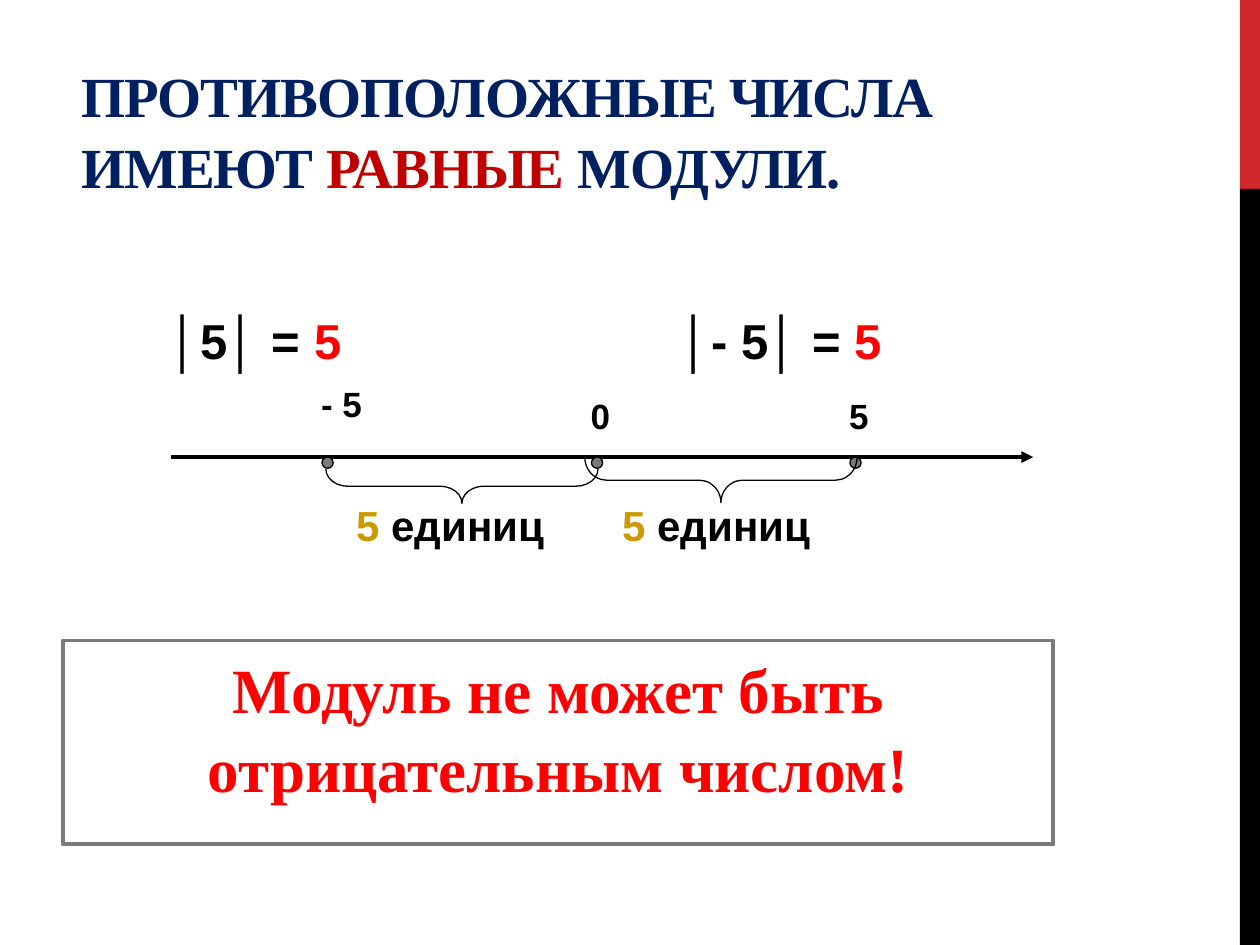
import pptx
import pptx.util
import pptx.dml.color
import pptx.enum.shapes
import pptx.enum.text
import pptx.oxml.ns
import lxml.etree
from dataclasses import dataclass

Pt = pptx.util.Pt
qn = pptx.oxml.ns.qn
Shape = pptx.enum.shapes.MSO_SHAPE
Anchor = pptx.enum.text.MSO_ANCHOR
Align = pptx.enum.text.PP_ALIGN


@dataclass(frozen=True)
class Theme:
    serif: str = "Times New Roman"
    sans: str = "Arial"
    black: str = "000000"
    white: str = "FFFFFF"
    gray: str = "7A7A7A"
    navy: str = "002060"
    crimson: str = "C00000"
    red: str = "FF0000"
    gold: str = "CC9900"
    band: str = "D1282E"
    title_size: float = 32.4
    rule_size: float = 36
    equation_size: float = 28
    unit_size: float = 24
    mark_size: float = 20


theme = Theme()
rgb = pptx.dml.color.RGBColor.from_string


def add_preset(kind, left, top, width, height, fill=None, line=None, weight=0.75):
    shape = slide.shapes.add_shape(kind, Pt(left), Pt(top), Pt(width), Pt(height))
    shape.shadow.inherit = False
    if fill:
        shape.fill.solid()
        shape.fill.fore_color.rgb = rgb(fill)
    else:
        shape.fill.background()
    if line:
        shape.line.color.rgb = rgb(line)
        shape.line.width = Pt(weight)
    else:
        shape.line.fill.background()
    return shape


def write(holder, runs, font, size, wrap=True, anchor=Anchor.TOP):
    frame = holder.text_frame
    frame.word_wrap = wrap
    frame.vertical_anchor = anchor
    paragraph = frame.paragraphs[0]
    for words, color, bold in runs:
        run = paragraph.add_run()
        run.text = words
        run.font.name = font
        run.font.size = Pt(size)
        run.font.bold = bold
        run.font.color.rgb = rgb(color)
    return paragraph


deck = pptx.Presentation()
deck.slide_width, deck.slide_height = Pt(720), Pt(540)
slide = deck.slides.add_slide(deck.slide_layouts[6])

for top, height, color in [(0, 108, theme.band), (108, 432, theme.black)]:
    add_preset(Shape.RECTANGLE, 708.5, top, 11.5, height, color)

title = slide.shapes.add_textbox(Pt(39.6), Pt(28), Pt(570), Pt(90))
heading = write(title, [
    ("ПРОТИВОПОЛОЖНЫЕ ЧИСЛА ИМЕЮТ ", theme.navy, True),
    ("РАВНЫЕ ", theme.crimson, True),
    ("МОДУЛИ.", theme.navy, True),
], theme.serif, theme.title_size, anchor=Anchor.BOTTOM)
heading.line_spacing = 1.05
for run in heading.runs:
    run.font._element.set("spc", "-60")

rule_box = add_preset(Shape.RECTANGLE, 36, 366, 566, 116.5, theme.white, theme.gray, 2.25)
rule = write(rule_box, [("Модуль не может быть отрицательным числом!", theme.red, True)],
             theme.serif, theme.rule_size)
rule.alignment = Align.CENTER
rule.line_spacing = 1.05
rule.space_before, rule.space_after = Pt(7.2), Pt(6)

equations = slide.shapes.add_textbox(Pt(90), Pt(174.2), Pt(458), Pt(41))
moduli = write(equations, [
    ("│", theme.black, False),
    ("5│ = ", theme.black, True),
    ("5", theme.red, True),
    ("\t│- 5│ = ", theme.black, True),
    ("5", theme.red, True),
], theme.sans, theme.equation_size)
tab_list = lxml.etree.SubElement(moduli._p.get_or_add_pPr(), qn("a:tabLst"))
lxml.etree.SubElement(tab_list, qn("a:tab"), pos=str(Pt(292)), algn="l")

axis_y = 261.2
axis = slide.shapes.add_connector(pptx.enum.shapes.MSO_CONNECTOR.STRAIGHT,
                                  Pt(98), Pt(axis_y), Pt(590.4), Pt(axis_y))
axis.line.color.rgb = rgb(theme.black)
axis.line.width = Pt(2.25)
lxml.etree.SubElement(axis.line._get_or_add_ln(), qn("a:tailEnd"), type="triangle")
lxml.etree.SubElement(axis._element.spPr, qn("a:effectLst"))

for label, point_x, label_x, label_y, label_width in [
    ("- 5", 187.2, 176.4, 215.3, 41),
    ("0", 341.2, 330.5, 221.8, 28),
    ("5", 488.9, 478.1, 221.8, 28),
]:
    add_preset(Shape.OVAL, point_x - 3.2, axis_y, 6.4, 6.4, theme.gray, theme.black)
    mark = slide.shapes.add_textbox(Pt(label_x), Pt(label_y), Pt(label_width), Pt(31.7))
    write(mark, [(label, theme.black, True)], theme.sans, theme.mark_size, wrap=False)

brace_span = 155.5
for middle_x, middle_y, depth, curve, unit_x, unit_width in [
    (264, 277.8, 19.6, 0.64, 196.6, 133),
    (412, 274.4, 25.8, 0.48, 348.5, 203),
]:
    brace = add_preset(Shape.LEFT_BRACE, middle_x - depth / 2, middle_y - brace_span / 2,
                       depth, brace_span, line=theme.black)
    brace.rotation = 270
    brace.adjustments[0] = curve
    units = slide.shapes.add_textbox(Pt(unit_x), Pt(282.2), Pt(unit_width), Pt(36))
    write(units, [("5", theme.gold, True), (" единиц", theme.black, True)],
          theme.sans, theme.unit_size)

deck.save("out.pptx")
